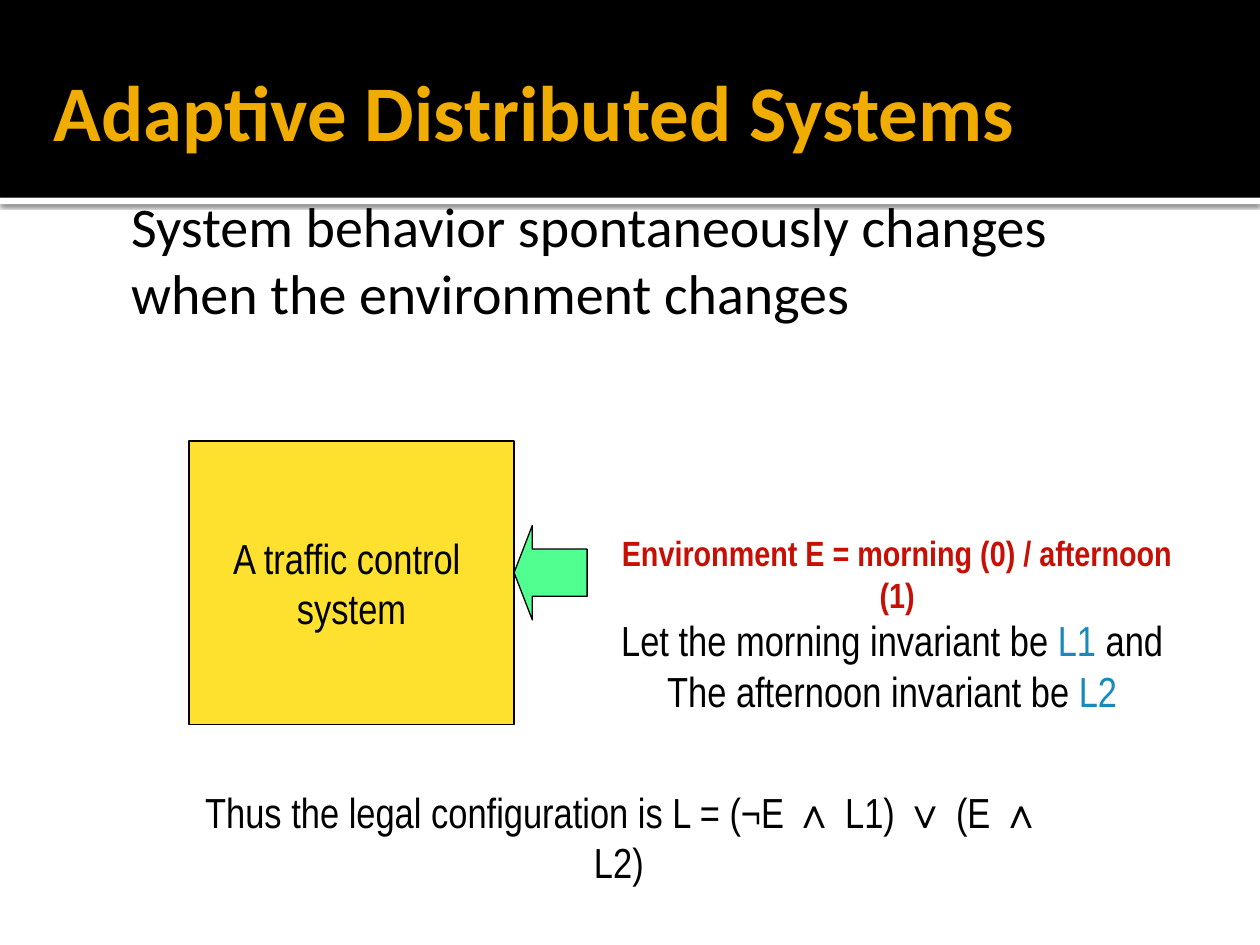
import pptx
import pptx.util
import pptx.dml.color
import pptx.enum.shapes
import pptx.enum.text
import pptx.oxml
import pptx.oxml.ns

Inches = pptx.util.Inches
Pt = pptx.util.Pt
KINDS = pptx.enum.shapes.MSO_SHAPE
ALIGN = pptx.enum.text.PP_ALIGN
ANCHOR = pptx.enum.text.MSO_ANCHOR
NARROW = "Arial Narrow"
BLUE = "168BBA"


def color(code):
    return pptx.dml.color.RGBColor.from_string(code)


def draw(slide, kind, box, fill, line=None):
    shape = slide.shapes.add_shape(kind, *map(Inches, box))
    shape.shadow.inherit = False
    shape.fill.solid()
    shape.fill.fore_color.rgb = color(fill)
    if line:
        shape.line.color.rgb = color(line)
        shape.line.width = Pt(0.75)
    else:
        shape.line.fill.background()
    return shape


def write(frame, lines, size, font=NARROW, ink="000000", bold=False, align=ALIGN.CENTER):
    frame.text = "\n".join("".join(text for text, _ in line) for line in lines)
    for para, line in zip(frame.paragraphs, lines):
        para.text = ""
        para.alignment = align
        for text, tint in line:
            run = para.add_run()
            run.text = text
            run.font.name = font
            run.font.size = Pt(size)
            run.font.bold = bold
            run.font.color.rgb = color(tint or ink)


def label(slide, box, lines, size, wrap=True, **style):
    frame = slide.shapes.add_textbox(*map(Inches, box)).text_frame
    frame.word_wrap = wrap
    write(frame, lines, size, **style)
    return frame


def shade(shape):
    effects = shape.element.spPr.find(pptx.oxml.ns.qn("a:effectLst"))
    effects.append(pptx.oxml.parse_xml(
        f'<a:outerShdw {pptx.oxml.ns.nsdecls("a")} blurRad="{Pt(2.5)}" '
        f'dist="{Pt(0.8)}" dir="5400000" algn="tl" rotWithShape="0">'
        '<a:srgbClr val="000000"><a:alpha val="60000"/></a:srgbClr></a:outerShdw>'))


def header(slide, x, y, w, h):
    shade(draw(slide, KINDS.RECTANGLE, (x, y + h, w, 0.05), "FFFFFF"))
    draw(slide, KINDS.RECTANGLE, (x, y, w, h), "000000")
    frame = label(slide, (x + 0.33, y + 0.25, w - 0.5, 1.25),
                  [[("Adaptive Distributed Systems", None)]], 45,
                  font="Calibri", ink="F0AD00", bold=True, align=ALIGN.LEFT)
    frame.vertical_anchor = ANCHOR.MIDDLE
    frame.margin_right = Inches(0.05)


def intro(slide, x, y, w, h):
    frame = label(slide, (x, y, w, h),
                  [[("System behavior spontaneously changes when the environment changes", None)]],
                  32, font="Calibri", align=ALIGN.LEFT)
    frame.margin_left = Inches(0.54)
    frame.margin_top = Inches(0.1)


def system(slide, x, y, w, h):
    block = draw(slide, KINDS.RECTANGLE, (x, y, w, h), "FDE12E", "000000")
    frame = block.text_frame
    frame.word_wrap = False
    frame.vertical_anchor = ANCHOR.MIDDLE
    write(frame, [[("A traffic control ", None)], [("system", None)]], 24)
    arrow = draw(slide, KINDS.LEFT_ARROW, (x + w, y + 0.67, 0.58, 0.75), "51FF91", "000000")
    arrow.adjustments[0] = 0.5
    arrow.adjustments[1] = 0.25


def rules(slide, x, y, w):
    label(slide, (x, y, w, 0.43),
          [[("Environment E = morning (0) / afternoon (1)", None)]],
          20, ink="C70F05", bold=True)
    label(slide, (x + 0.15, y + 0.66, 4.52, 0.9),
          [[("Let the morning invariant be", None), (" L1", BLUE), (" and", None)],
           [("The afternoon invariant be ", None), ("L2", BLUE)]], 24, wrap=False)


def result(slide, x, y, w, h):
    label(slide, (x, y, w, h),
          [[("Thus the legal configuration is L = (¬E ∧ L1) ∨ (E ∧ L2) ", None)]], 24)


def main():
    deck = pptx.Presentation()
    deck.slide_width = Inches(10)
    deck.slide_height = Inches(7.5)
    slide = deck.slides.add_slide(deck.slide_layouts[6])
    header(slide, 0, 0, 10, 1.57)
    intro(slide, 0.5, 1.42, 8.92, 5.25)
    system(slide, 1.5, 3.5, 2.58, 2.25)
    result(slide, 1.4, 6.19, 7.1, 0.5)
    rules(slide, 4.67, 4.17, 4.9)
    deck.save("out.pptx")


if __name__ == "__main__":
    main()
